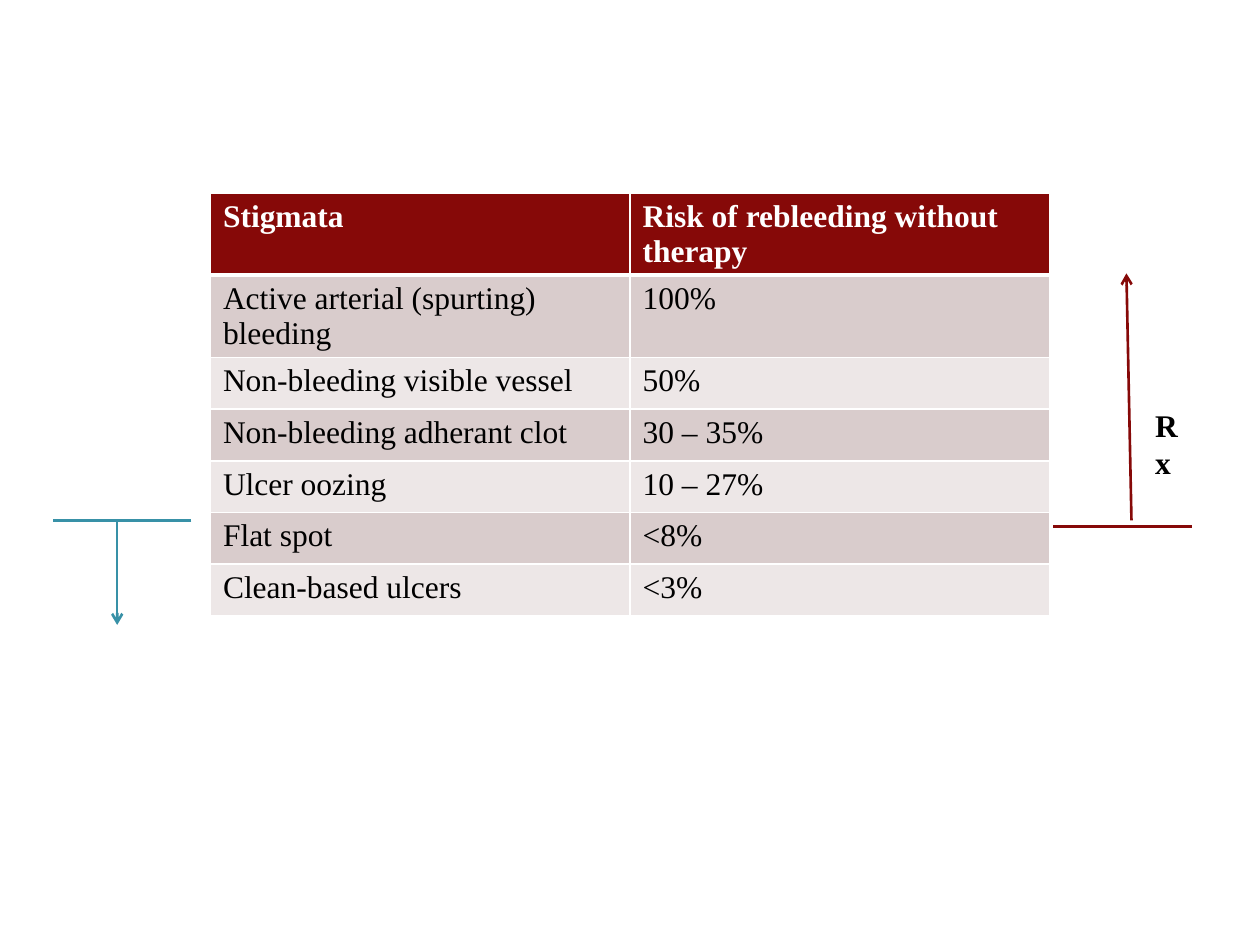
from dataclasses import dataclass

from lxml import etree
from pptx import Presentation
from pptx import util as u
from pptx.dml.color import RGBColor
from pptx.enum import shapes, text
from pptx.oxml.ns import qn

FONT = "Times New Roman"
WHITE, BLACK, RED, TEAL = "FFFFFF", "000000", "860908", "3891A7"
BANDS = ("D9CCCC", "EDE7E7")
ROW_HEIGHT, COL_WIDTH = 0.41, 3.33
ROWS = (
    ("Stigmata", "Risk of rebleeding without therapy"),
    ("Active arterial (spurting) bleeding", "100%"),
    ("Non-bleeding visible vessel", "50%"),
    ("Non-bleeding adherant clot", "30 – 35%"),
    ("Ulcer oozing", "10 – 27%"),
    ("Flat spot", "<8%"),
    ("Clean-based ulcers", "<3%"),
)


@dataclass
class Line:
    start: tuple[float, float]
    end: tuple[float, float]
    color: str
    arrow: bool = False


LINES = (
    Line((1.52, 4.13), (0.42, 4.13), TEAL),
    Line((0.93, 4.13), (0.93, 4.96), TEAL, arrow=True),
    Line((8.98, 4.13), (8.94, 2.17), RED, arrow=True),
    Line((9.46, 4.18), (8.36, 4.18), RED),
)


def rgb(value: str) -> RGBColor:
    return RGBColor.from_string(value)


def write(tf, content: str, color: str, bold: bool) -> None:
    r = tf.paragraphs[0].add_run()
    r.text = content
    for name, value in {"name": FONT, "size": u.Pt(18), "bold": bold}.items():
        setattr(r.font, name, value)
    r.font.color.rgb = rgb(color)


def add_borders(cell, widths: dict[str, float]) -> None:
    props = cell._tc.get_or_add_tcPr()
    for i, (side, width) in enumerate(widths.items()):
        ln = etree.Element(qn(f"a:ln{side}"), w=str(u.Pt(width)))
        fill = etree.SubElement(ln, qn("a:solidFill"))
        etree.SubElement(fill, qn("a:srgbClr"), val=WHITE)
        props.insert(i, ln)


def add_risk_table(s) -> None:
    frame = s.shapes.add_table(
        len(ROWS), 2, u.Inches(1.67), u.Inches(1.53),
        u.Inches(2 * COL_WIDTH), u.Inches(len(ROWS) * ROW_HEIGHT))
    table = frame.table
    for column in table.columns:
        column.width = u.Inches(COL_WIDTH)
    for i, row in enumerate(ROWS):
        header = i == 0
        table.rows[i].height = u.Inches(ROW_HEIGHT)
        widths = {"L": 1, "R": 1, "T": 3 if i == 1 else 1, "B": 3 if header else 1}
        for j, content in enumerate(row):
            cell = table.cell(i, j)
            cell.fill.solid()
            cell.fill.fore_color.rgb = rgb(RED if header else BANDS[(i - 1) % 2])
            add_borders(cell, widths)
            write(cell.text_frame, content, WHITE if header else BLACK, header)


def add_line(s, line: Line) -> None:
    points = [u.Inches(v) for v in (*line.start, *line.end)]
    sp = s.shapes.add_connector(shapes.MSO_CONNECTOR.STRAIGHT, *points)
    sp.line.color.rgb = rgb(line.color)
    sp.line.width = u.Pt(1.5)
    if line.arrow:
        etree.SubElement(sp.line._get_or_add_ln(), qn("a:tailEnd"), type="arrow")
    etree.SubElement(sp._element.spPr, qn("a:effectLst"))


def add_label(s, content: str) -> None:
    sp = s.shapes.add_textbox(*[u.Inches(v) for v in (9.07, 3.17, 0.49, 0.4)])
    tf = sp.text_frame
    tf.word_wrap = True
    tf.auto_size = text.MSO_AUTO_SIZE.SHAPE_TO_FIT_TEXT
    write(tf, content, BLACK, True)


def main() -> None:
    prs = Presentation()
    prs.slide_width, prs.slide_height = u.Inches(10), u.Inches(7.5)
    s = prs.slides.add_slide(prs.slide_layouts[6])
    add_risk_table(s)
    for line in LINES:
        add_line(s, line)
    add_label(s, "Rx")
    prs.save("out.pptx")


if __name__ == "__main__":
    main()
